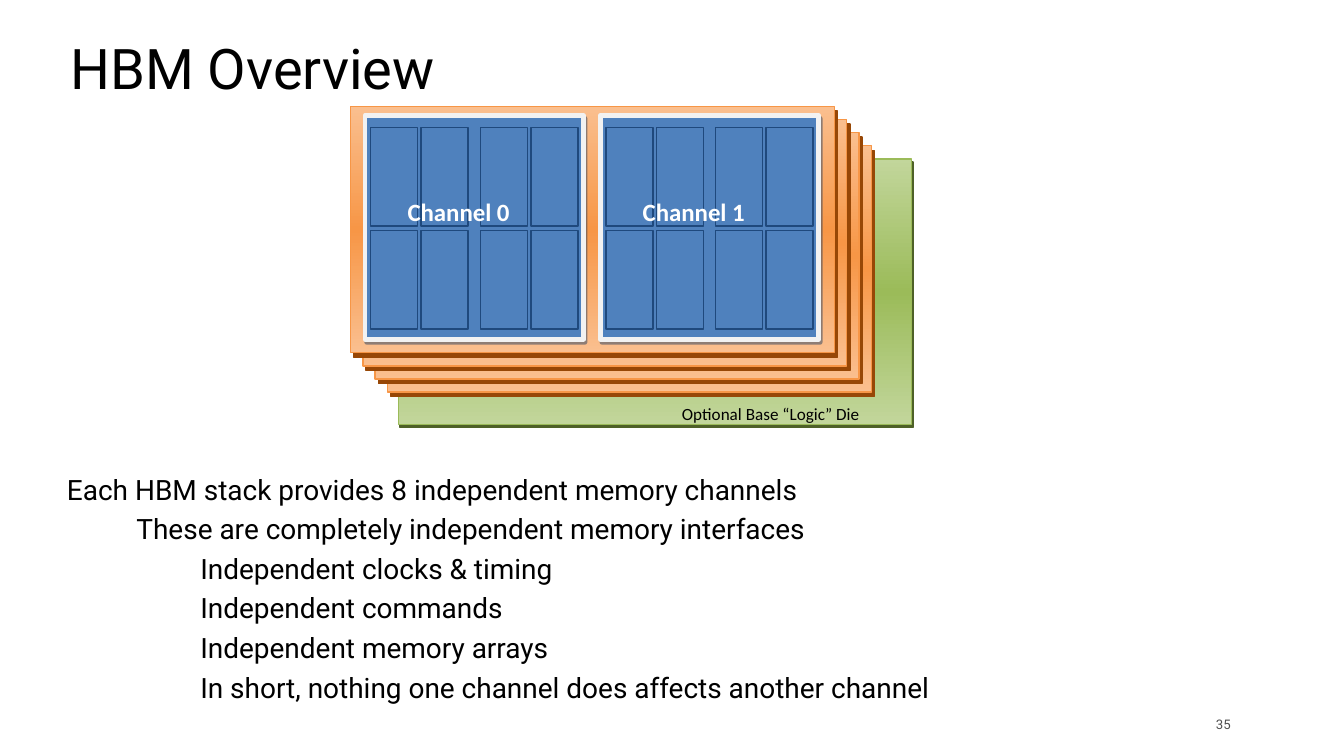
from copy import deepcopy
from dataclasses import dataclass
from itertools import product

from lxml import etree
from pptx import Presentation
from pptx.dml.color import RGBColor
from pptx.enum.shapes import MSO_SHAPE
from pptx.enum.text import MSO_ANCHOR, PP_ALIGN
from pptx.oxml.ns import qn
from pptx.util import Inches, Pt

RECT = MSO_SHAPE.RECTANGLE
TOP, MIDDLE, BOTTOM = MSO_ANCHOR.TOP, MSO_ANCHOR.MIDDLE, MSO_ANCHOR.BOTTOM
LEFT, RIGHT = PP_ALIGN.LEFT, PP_ALIGN.RIGHT

WIDTH, HEIGHT = Inches(12), Inches(6.75)
COLUMNS, ROWS = 120, 67.5


@dataclass(frozen=True)
class Theme:
    font: str = "Roboto"
    label_font: str = "Calibri"
    text: str = "000000"
    muted: str = "505050"
    white: str = "FFFFFF"
    die: tuple = ("FABF8F", "F79646", "974706")
    base: tuple = ("C2D69B", "9BBB59", "4E6128")
    channel: str = "4F81BD"
    channel_line: str = "F2F2F2"
    channel_shadow: str = "243F60"
    bank_line: str = "1F497D"
    title_size: float = 36
    body_size: float = 18
    channel_size: float = 16
    label_size: float = 11
    number_size: float = 8.5


THEME = Theme()

BULLETS = [
    (0, "Each HBM stack provides 8 independent memory channels"),
    (1, "These are completely independent memory interfaces"),
    (2, "Independent clocks & timing"),
    (2, "Independent commands"),
    (2, "Independent memory arrays"),
    (2, "In short, nothing one channel does affects another channel"),
]
INDENTS = [0, 0.62, 1.19]


def rgb(color):
    return RGBColor.from_string(color)


def place(left, top, width, height):
    col, row = WIDTH / COLUMNS, HEIGHT / ROWS
    return [round(v) for v in (left * col, top * row, width * col, height * row)]


def add_rect(s, box, line, line_width):
    sp = s.shapes.add_shape(RECT, *place(*box))
    sp.shadow.inherit = False
    sp.line.color.rgb = rgb(line)
    sp.line.width = Pt(line_width)
    return sp


def fill_solid(sp, color):
    sp.fill.solid()
    sp.fill.fore_color.rgb = rgb(color)


def fill_banded(sp, edge, middle):
    sp.fill.gradient()
    sp.fill.gradient_angle = 90
    stops = sp.fill.gradient_stops
    for stop, color, position in zip(stops, (edge, middle), (0, 0.5)):
        stop.color.rgb = rgb(color)
        stop.position = position
    stop_list = sp._element.spPr.find(".//" + qn("a:gsLst"))
    last = deepcopy(stop_list[0])
    last.set("pos", "100000")
    stop_list.append(last)


def add_shadow(sp, color, distance, angle, alpha=100):
    effects = sp._element.spPr.find(qn("a:effectLst"))
    shadow = etree.SubElement(
        effects, qn("a:outerShdw"), blurRad="0", dist=str(Pt(distance)),
        dir=str(angle * 60000), algn="ctr", rotWithShape="0")
    clr = etree.SubElement(shadow, qn("a:srgbClr"), val=color)
    etree.SubElement(clr, qn("a:alpha"), val=str(alpha * 1000))


def add_die(s, box, colors, distance, angle):
    edge, middle, shade = colors
    sp = add_rect(s, box, middle, 1)
    fill_banded(sp, edge, middle)
    add_shadow(sp, shade, distance, angle)


def add_text(s, box, text, size, color=THEME.text, font=THEME.font,
             bold=False, align=LEFT, anchor=TOP):
    tf = s.shapes.add_textbox(*place(*box)).text_frame
    tf.word_wrap = True
    tf.vertical_anchor = anchor
    p = tf.paragraphs[0]
    p.text = text
    p.alignment = align
    style(p, size, color, font, bold)
    return tf


def style(p, size, color, font, bold=False):
    p.font.size = Pt(size)
    p.font.name = font
    p.font.bold = bold
    p.font.color.rgb = rgb(color)


def add_bullets(s, box):
    tf = add_text(s, box, BULLETS[0][1], THEME.body_size)
    for level, text in BULLETS[1:]:
        p = tf.add_paragraph()
        p.text = text
        p.level = level
        p._p.get_or_add_pPr().set("marL", str(Inches(INDENTS[level])))
        style(p, THEME.body_size, THEME.text, THEME.font)
    for p in tf.paragraphs:
        p.line_spacing = 0.9
        p.space_before = Pt(6)


def add_channel(s, left, name):
    sp = add_rect(s, (left, 10.3, 19.5, 20), THEME.channel_line, 3)
    fill_solid(sp, THEME.channel)
    add_shadow(sp, THEME.channel_shadow, 2.2, 63, 50)
    for pair, side, row in product(range(2), repeat=3):
        x = left + 0.5 + pair * 9.8 + side * 4.5
        bank = add_rect(s, (x, 11.4 + row * 9.2, 4.2, 8.8), THEME.bank_line, 1)
        fill_solid(bank, THEME.channel)
    add_text(s, (left + 2.8, 17.1, 14.5, 6.8), name, THEME.channel_size,
             THEME.white, THEME.label_font, bold=True)


def add_stack(s):
    add_die(s, (35.6, 14.2, 45.8, 23.7), THEME.base, 2.2, 63)
    add_text(s, (59.9, 35.5, 25.6, 2.8), "Optional Base “Logic” Die",
             THEME.label_size, font=THEME.label_font)
    for depth in reversed(range(4)):
        box = (31.3 + depth * 1.1, 9.5 + depth * 1.17, 43.2, 22)
        add_die(s, box, THEME.die, 3.6, 56)
    for i in range(2):
        add_channel(s, 32.6 + i * 21, f"Channel {i}")


def add_page_number(s, number):
    tf = add_text(s, (106.8, 63.8, 3.1, 1.8), number, THEME.number_size,
                  THEME.muted, align=RIGHT, anchor=MIDDLE)
    tf.margin_left = tf.margin_right = tf.margin_top = tf.margin_bottom = 0


def main():
    prs = Presentation()
    prs.slide_width, prs.slide_height = WIDTH, HEIGHT
    s = prs.slides.add_slide(prs.slide_layouts[6])
    add_page_number(s, "35")
    tf = add_text(s, (5.3, 3.1, 109.1, 6.5), "HBM Overview",
                  THEME.title_size, anchor=BOTTOM)
    tf.paragraphs[0].line_spacing = 0.9
    add_bullets(s, (5, 42, 108, 22))
    add_stack(s)
    prs.save("out.pptx")


if __name__ == "__main__":
    main()
